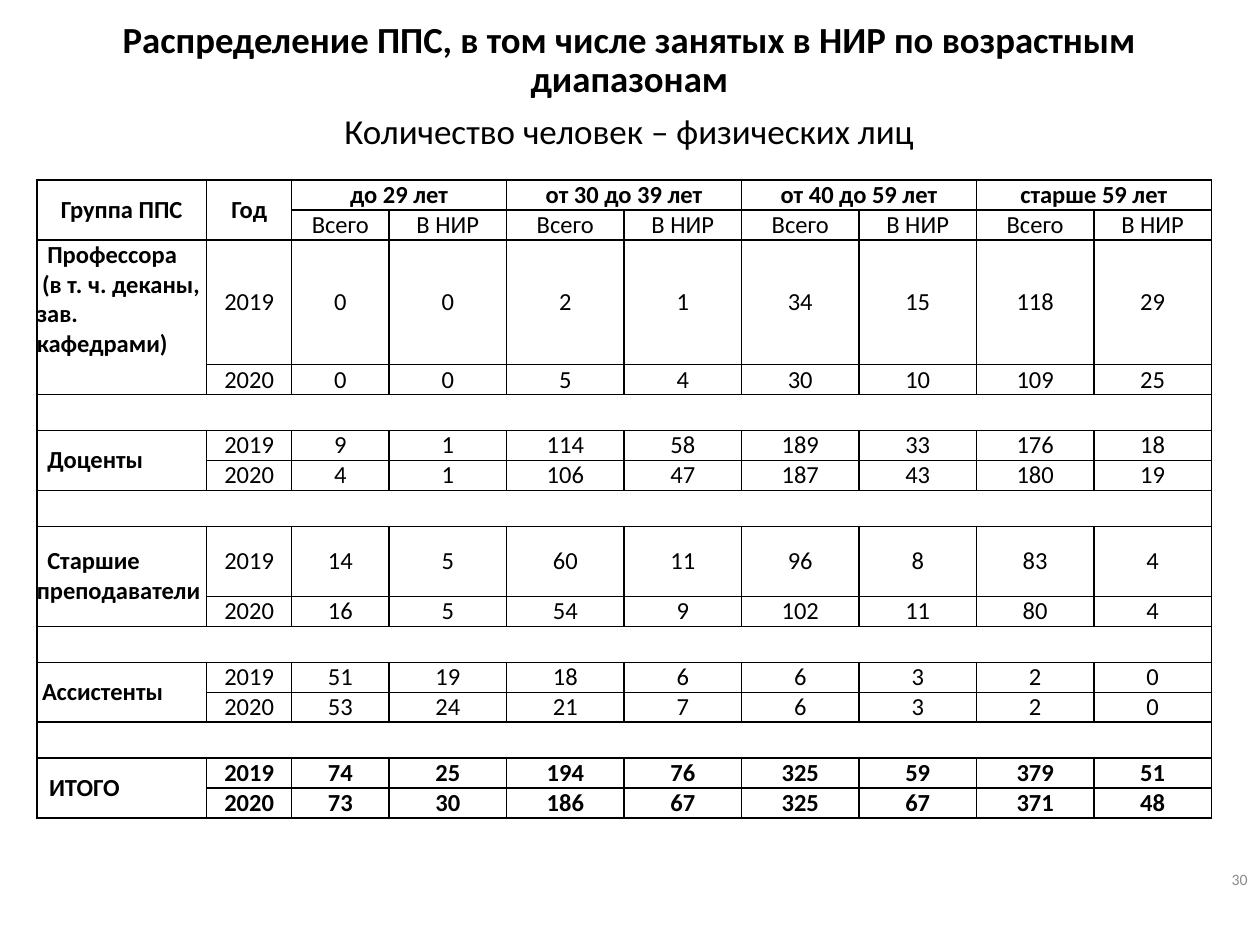
from lxml import etree
from pptx import Presentation
from pptx.dml.color import RGBColor
from pptx.enum import text
from pptx.oxml import ns
from pptx.util import Pt

BLACK = RGBColor(0x00, 0x00, 0x00)
GREY = RGBColor(0x8C, 0x8C, 0x8C)
CENTER, LEFT, RIGHT = text.PP_ALIGN.CENTER, text.PP_ALIGN.LEFT, text.PP_ALIGN.RIGHT
TOP, MIDDLE = text.MSO_ANCHOR.TOP, text.MSO_ANCHOR.MIDDLE

AGES = ["до 29 лет", "от 30 до 39 лет", "от 40 до 59 лет", "старше 59 лет"]
YEARS = ["2019", "2020"]
# Label paragraphs with their first-line indents, then one row of counts per year
GROUPS = [
    ([("Профессора", 6), ("(в т. ч. деканы, зав. кафедрами)", 3)],
     [[0, 0, 2, 1, 34, 15, 118, 29], [0, 0, 5, 4, 30, 10, 109, 25]]),
    ([("Доценты", 6)],
     [[9, 1, 114, 58, 189, 33, 176, 18], [4, 1, 106, 47, 187, 43, 180, 19]]),
    ([("Старшие преподаватели", 6)],
     [[14, 5, 60, 11, 96, 8, 83, 4], [16, 5, 54, 9, 102, 11, 80, 4]]),
    ([("Ассистенты", 3)],
     [[51, 19, 18, 6, 6, 3, 2, 0], [53, 24, 21, 7, 6, 3, 2, 0]]),
    ([("ИТОГО", 7)],
     [[74, 25, 194, 76, 325, 59, 379, 51], [73, 30, 186, 67, 325, 67, 371, 48]]),
]
COLUMN_WIDTHS = [97.1, 48.6, 55.7] + [67.15] * 7
ROW, GAP_ROW = 17.1, 20.6
TALL_ROWS = {2: 71.3, 8: 40}
GROUP_STEP = 3


def write(para, words, size, bold=False, align=CENTER, color=BLACK):
    para.alignment = align
    span = para.add_run()
    span.text = words
    span.font.name = "Calibri"
    span.font.size = Pt(size)
    span.font.bold = bold
    span.font.color.rgb = color


def add_borders(cell):
    properties = cell._tc.get_or_add_tcPr()
    for side in ("a:lnL", "a:lnR", "a:lnT", "a:lnB"):
        line = etree.SubElement(properties, ns.qn(side), w=str(Pt(1)))
        fill = etree.SubElement(line, ns.qn("a:solidFill"))
        etree.SubElement(fill, ns.qn("a:srgbClr"), val=str(BLACK))


deck = Presentation()
deck.slide_width, deck.slide_height = Pt(720), Pt(540)
page = deck.slides.add_slide(deck.slide_layouts[5])

# Title and subtitle
title = page.shapes.title
title.left, title.top, title.width, title.height = Pt(35.3), Pt(8.6), Pt(648.7), Pt(90)
frame = title.text_frame
frame.auto_size = text.MSO_AUTO_SIZE.NONE
frame.vertical_anchor = TOP
write(frame.paragraphs[0],
      "Распределение ППС, в том числе занятых в НИР по возрастным диапазонам", 21, True)
write(frame.add_paragraph(), "Количество человек – физических лиц", 20)
for para in frame.paragraphs:
    para.line_spacing = 0.9
    para.space_before = Pt(7.5)

# Table grid
row_count = 2 + GROUP_STEP * len(GROUPS) - 1
heights = [TALL_ROWS.get(row, GAP_ROW if row > 2 and row % GROUP_STEP == 1 else ROW)
           for row in range(row_count)]
table = page.shapes.add_table(row_count, len(COLUMN_WIDTHS), Pt(21), Pt(102.9),
                              Pt(sum(COLUMN_WIDTHS)), Pt(sum(heights))).table
table.first_row = table.horz_banding = False
for column, width in zip(table.columns, COLUMN_WIDTHS):
    column.width = Pt(width)
for row, height in zip(table.rows, heights):
    row.height = Pt(height)
for cell in table.iter_cells():
    cell.margin_left = cell.margin_right = cell.margin_top = cell.margin_bottom = 0
    cell.vertical_anchor = MIDDLE
    add_borders(cell)
    cell.fill.background()
    cell.text_frame.paragraphs[0].font.size = Pt(14)

# Header
for column, heading in enumerate(["Группа ППС", "Год"]):
    table.cell(0, column).merge(table.cell(1, column))
    write(table.cell(0, column).text_frame.paragraphs[0], heading, 14, True)
for index, age in enumerate(AGES):
    column = 2 + 2 * index
    table.cell(0, column).merge(table.cell(0, column + 1))
    write(table.cell(0, column).text_frame.paragraphs[0], age, 14, True)
    for offset, heading in enumerate(["Всего", "В НИР"]):
        write(table.cell(1, column + offset).text_frame.paragraphs[0], heading, 14)

# Staff groups, each followed by a full-width empty row except the last
for index, (label, counts) in enumerate(GROUPS):
    first = 2 + GROUP_STEP * index
    is_total = index == len(GROUPS) - 1
    label_cell = table.cell(first, 0)
    label_cell.merge(table.cell(first + 1, 0))
    for number, (words, indent) in enumerate(label):
        frame = label_cell.text_frame
        para = frame.add_paragraph() if number else frame.paragraphs[0]
        write(para, words, 14, True, LEFT)
        para._p.get_or_add_pPr().set("indent", str(Pt(indent)))
    for offset, (year, values) in enumerate(zip(YEARS, counts)):
        for column, value in enumerate([year] + values, start=1):
            para = table.cell(first + offset, column).text_frame.paragraphs[0]
            write(para, str(value), 14, is_total)
    if not is_total:
        table.cell(first + 2, 0).merge(table.cell(first + 2, len(COLUMN_WIDTHS) - 1))
table.cell(2, 0).vertical_anchor = TOP

# Page number
box = page.shapes.add_textbox(Pt(677.5), Pt(485.3), Pt(42.5), Pt(33.8))
box.text_frame.word_wrap = True
box.text_frame.vertical_anchor = MIDDLE
write(box.text_frame.paragraphs[0], "30", 9, align=RIGHT, color=GREY)

deck.save("out.pptx")
